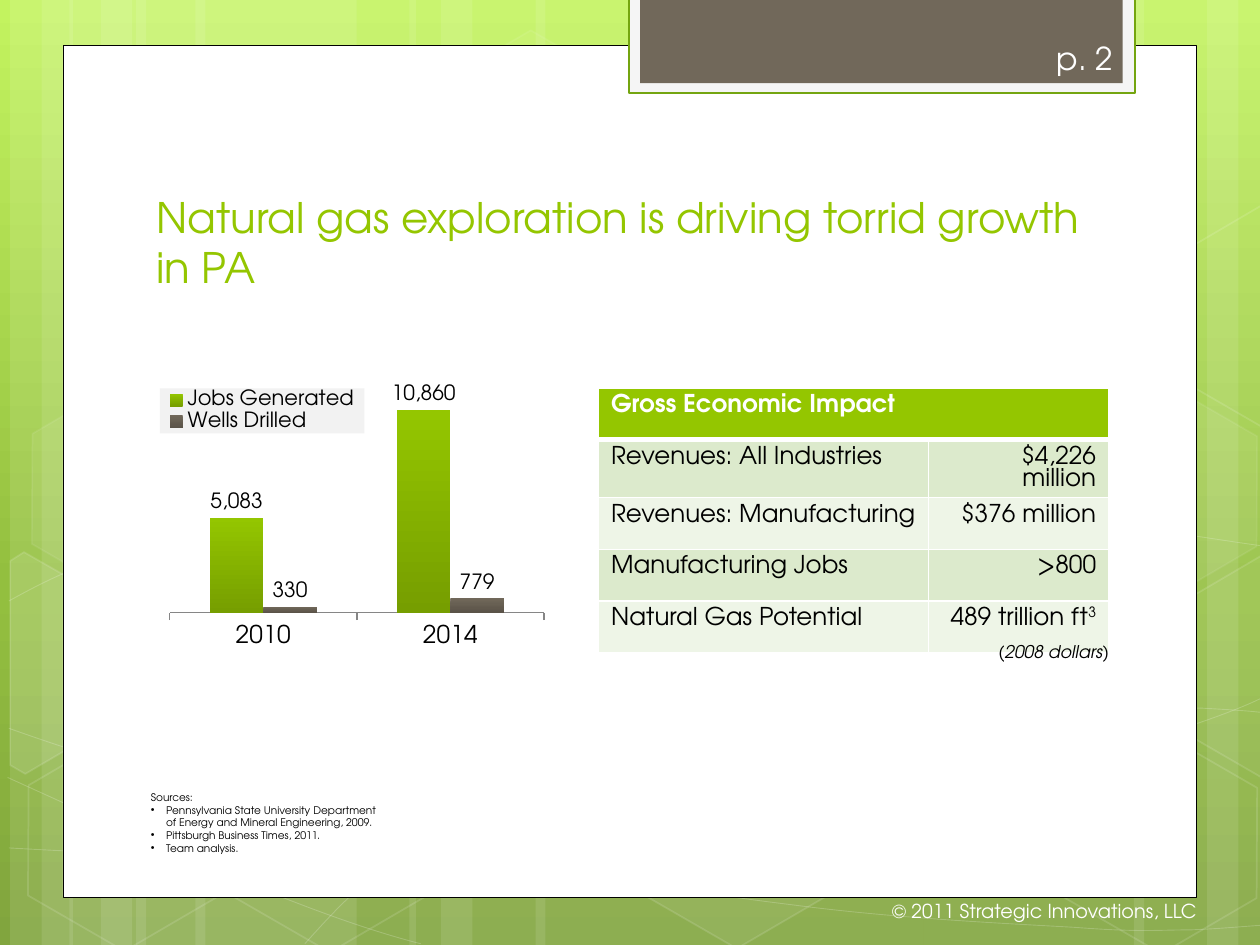
from copy import deepcopy
from dataclasses import dataclass
from math import cos, radians, sin

from lxml import etree
from pptx import Presentation
from pptx.chart.data import CategoryChartData
from pptx.dml.color import RGBColor
from pptx.enum.chart import XL_CHART_TYPE, XL_LABEL_POSITION, XL_LEGEND_POSITION, XL_TICK_MARK
from pptx.enum.shapes import MSO_SHAPE
from pptx.enum.text import MSO_ANCHOR, MSO_AUTO_SIZE, PP_ALIGN
from pptx.oxml import parse_xml
from pptx.oxml.ns import nsdecls, qn
from pptx.util import Pt

SCALE = 9144  # EMU per px, 100 px to the inch
TILT = 30
FONT = "TeX Gyre Adventor"
GREEN, TAUPE, WHITE, BLACK = "94C600", "71685A", "FFFFFF", "000000"
RECTANGLE, HEXAGON = MSO_SHAPE.RECTANGLE, MSO_SHAPE.HEXAGON
LEFT, RIGHT = PP_ALIGN.LEFT, PP_ALIGN.RIGHT


@dataclass(frozen=True)
class Paint:
    fill: str | None = None
    fill_alpha: int = 100
    line: str | None = None
    width: float = 1
    line_alpha: int = 100


@dataclass(frozen=True)
class CutHexagon:
    center: tuple
    points: list
    fill_alpha: int


@dataclass(frozen=True)
class Hexagon:
    left: int
    top: int
    fill_alpha: int
    line_alpha: int


BAND = Paint(fill=WHITE, fill_alpha=10)
CURVE = Paint(line=WHITE, width=0.5, line_alpha=20)
BANDS = [(108, 175), (8, 50), (33, 83), (155, 175), (55, 50), (80, 83),
         (733, 175), (958, 50), (900, 83), (425, 308), (325, 50), (350, 83)]
# Each curve is a start point followed by triples of Bézier points
CURVES = [
    [(7, 673), (61, 676), (115, 679), (190, 678), (265, 677), (358, 675), (458, 665),
     (558, 655), (700, 636), (792, 617), (883, 598), (977, 568), (1007, 551)],
    [(7, 477), (36, 461), (65, 446), (121, 431), (178, 416), (259, 394), (347, 387),
     (436, 380), (544, 379), (654, 387), (764, 395), (947, 426), (1007, 434)],
    [(6, 617), (127, 672), (247, 727), (334, 749)],
    [(7, 578), (38, 589), (70, 600), (128, 616), (186, 631), (273, 656), (357, 673),
     (440, 690), (545, 708), (628, 718), (711, 729), (800, 733), (853, 736),
     (905, 740), (919, 738), (945, 738), (971, 737), (989, 735), (1007, 734)],
    [(242, 749), (260, 729), (278, 709), (302, 691), (326, 673), (360, 653), (388, 639),
     (416, 625), (433, 619), (470, 609), (506, 599), (573, 585), (608, 578),
     (644, 571), (649, 571), (680, 569), (711, 566), (760, 563), (794, 562),
     (829, 561), (886, 562), (886, 562), (886, 562), (953, 562), (953, 562),
     (971, 563), (988, 564), (997, 565), (1006, 566), (1003, 565), (1006, 566)],
]
HEXAGONS = [Hexagon(334, 36, 4, 8), Hexagon(497, 589, 6, 12), Hexagon(11, 591, 0, 12),
            Hexagon(14, 312, 7, 8), Hexagon(174, 592, 0, 12), Hexagon(753, 453, 10, 12),
            Hexagon(834, 593, 0, 12), Hexagon(834, 314, 7, 8)]
CUT_HEXAGONS = [
    CutHexagon((36, 535), [(8, 445), (19, 438), (96, 482), (95, 570), (20, 614), (8, 607)], 10),
    CutHexagon((985, 520), [(926, 485), (1001, 441), (1009, 446), (1009, 613), (1002, 617),
                            (926, 573)], 4),
    CutHexagon((985, 241), [(926, 207), (1001, 163), (1010, 168), (1009, 335), (1002, 339),
                            (926, 295)], 0),
]
TABLE_ROWS = [("Gross Economic Impact", ""), ("Revenues: All Industries", "$4,226 million"),
              ("Revenues: Manufacturing", "$376 million"), ("Manufacturing Jobs", ">800"),
              ("Natural Gas Potential", "489 trillion ft")]
SOURCES = ["Sources:",
           "Pennsylvania State University Department\vof Energy and Mineral Engineering, 2009.",
           "Pittsburgh Business Times, 2011.", "Team analysis."]


def px(*values: float) -> list[int]:
    return [round(value * SCALE) for value in values]


def color(value: str) -> RGBColor:
    return RGBColor.from_string(value)


def assign(target, **values) -> None:
    for name, value in values.items():
        setattr(target, name, value)


def set_font(font, size: float, fill: str = BLACK, **extra) -> None:
    assign(font, name=FONT, size=Pt(size), **extra)
    font.color.rgb = color(fill)


def set_fill(fill, value: str | None, alpha: int = 100) -> None:
    if value is None or alpha == 0:
        fill.background()
        return
    fill.solid()
    fill.fore_color.rgb = color(value)
    if alpha < 100:
        node = fill._xPr.find(qn("a:solidFill"))[0]
        etree.SubElement(node, qn("a:alpha"), val=str(alpha * 1000))


def set_paint(shape, paint: Paint) -> None:
    shape.shadow.inherit = False
    set_fill(shape.fill, paint.fill, paint.fill_alpha)
    set_fill(shape.line.fill, paint.line, paint.line_alpha)
    if paint.line:
        shape.line.width = Pt(paint.width)


def add_box(slide, box: tuple, paint: Paint, kind=RECTANGLE):
    shape = slide.shapes.add_shape(kind, *px(*box))
    set_paint(shape, paint)
    return shape


def add_outline(slide, points: list, paint: Paint, close: bool):
    start, *rest = [tuple(px(*point)) for point in points]
    builder = slide.shapes.build_freeform(*start)
    builder.add_line_segments(rest, close=close)
    shape = builder.convert_to_shape()
    set_paint(shape, paint)
    return shape


def add_curve(slide, points: list) -> None:
    """Draw an outline whose points, in threes, become Bézier segments."""
    shape = add_outline(slide, points, CURVE, close=False)
    segments = list(shape.element.iter(qn("a:lnTo")))
    outline = segments[0].getparent()
    for first in range(0, len(segments), 3):
        bezier = etree.SubElement(outline, qn("a:cubicBezTo"))
        for segment in segments[first:first + 3]:
            bezier.append(segment[0])
            outline.remove(segment)


def add_cut_hexagon(slide, item: CutHexagon) -> None:
    """Turn the points back about the center, then tilt the whole shape."""
    cosine, sine = cos(radians(TILT)), sin(radians(TILT))
    center_x, center_y = item.center
    points = [(center_x + (x - center_x) * cosine + (y - center_y) * sine,
               center_y + (y - center_y) * cosine - (x - center_x) * sine)
              for x, y in item.points]
    shape = add_outline(slide, points, Paint(WHITE, item.fill_alpha, WHITE, 1, 12), close=True)
    shape.rotation = TILT


def add_text(slide, box: tuple, lines: list, size: float, fill: str = BLACK,
             align=LEFT, wrap: bool = True, **extra) -> None:
    frame = slide.shapes.add_textbox(*px(*box)).text_frame
    frame.word_wrap = wrap
    for index, line in enumerate(lines):
        paragraph = frame.add_paragraph() if index else frame.paragraphs[0]
        assign(paragraph, text=line, alignment=align)
        if index:
            properties = paragraph._p.get_or_add_pPr()
            indent = px(12)[0]
            properties.set("marL", str(indent))
            properties.set("indent", str(-indent))
            etree.SubElement(properties, qn("a:buFont"), typeface="Arial")
            etree.SubElement(properties, qn("a:buChar"), char="•")
        for run in paragraph.runs:
            set_font(run.font, size, fill, **extra)


def set_gradient(fill, stops: list, tree) -> None:
    """Fill from top to bottom with (percent, color) stops."""
    fill.gradient()
    fill.gradient_angle = 270
    stop_list = tree.find(".//" + qn("a:gsLst"))
    for _ in stops[2:]:
        stop_list.append(deepcopy(stop_list[0]))
    for stop, (position, value) in zip(fill.gradient_stops, stops):
        stop.position = position / 100
        stop.color.rgb = color(value)


def chart_layout(x: float, y: float, w: float, h: float, inner: bool = False):
    target = '<c:layoutTarget val="inner"/>' if inner else ""
    modes = '<c:xMode val="edge"/><c:yMode val="edge"/>'
    sizes = "".join(f'<c:{key} val="{value}"/>' for key, value in zip("xywh", (x, y, w, h)))
    return parse_xml(f'<c:layout {nsdecls("c")}><c:manualLayout>{target}{modes}{sizes}'
                     '</c:manualLayout></c:layout>')


def add_jobs_chart(slide) -> None:
    data = CategoryChartData(number_format="#,##0")
    data.categories = ["2010", "2014"]
    data.add_series("Jobs Generated", (5083, 10860))
    data.add_series("Wells Drilled", (330, 779))
    chart = slide.shapes.add_chart(XL_CHART_TYPE.COLUMN_CLUSTERED, *px(115, 292, 396, 324), data).chart
    assign(chart, has_title=False, has_legend=True)
    set_font(chart.font, 18)
    assign(chart.value_axis, visible=False, has_major_gridlines=False,
           minimum_scale=0, maximum_scale=12000)
    axis = chart.category_axis
    axis.major_tick_mark = XL_TICK_MARK.OUTSIDE
    axis.format.line.color.rgb = color("868686")
    set_font(axis.tick_labels.font, 14)
    plot = chart.plots[0]
    assign(plot, gap_width=150, overlap=0, vary_by_categories=False)
    for series, shades in zip(plot.series, [(GREEN, "769E00"), (TAUPE, "5A5348")]):
        series.invert_if_negative = False
        set_gradient(series.format.fill, list(zip((0, 100), shades)), series._element)
        labels = series.data_labels
        assign(labels, show_value=True, number_format="#,##0", number_format_is_linked=False,
               position=XL_LABEL_POSITION.OUTSIDE_END)
        set_font(labels.font, 12)
    # Legend and plot area placement
    assign(chart.legend, position=XL_LEGEND_POSITION.LEFT, include_in_layout=True)
    set_font(chart.legend.font, 12)
    legend = chart.element.find(".//" + qn("c:legend"))
    area = chart.element.find(".//" + qn("c:plotArea"))
    for parent in (legend, area):
        for old in parent.findall(qn("c:layout")):
            parent.remove(old)
    area.insert(0, chart_layout(0.05, 0.05, 0.75, 0.55, inner=True))
    legend.find(qn("c:legendPos")).addnext(chart_layout(0.03, 0.05, 0.41, 0.11))
    legend.find(qn("c:overlay")).addnext(parse_xml(
        f'<c:spPr {nsdecls("c", "a")}><a:solidFill><a:srgbClr val="F2F2F2"/></a:solidFill></c:spPr>'))


def set_borders(cell, header: bool) -> None:
    properties = cell._tc.get_or_add_tcPr()
    for index, side in enumerate(("lnL", "lnR", "lnT", "lnB")):
        width = Pt(3 if header and side == "lnB" else 1)
        properties.insert(index, parse_xml(
            f'<a:{side} {nsdecls("a")} w="{width}"><a:solidFill>'
            f'<a:srgbClr val="{WHITE}"/></a:solidFill></a:{side}>'))


def add_impact_table(slide) -> None:
    table = slide.shapes.add_table(len(TABLE_ROWS), 2, *px(475, 308, 405, 205)).table
    for column, width in zip(table.columns, px(262, 143)):
        column.width = width
    for row, texts in enumerate(TABLE_ROWS):
        table.rows[row].height = px(41)[0]
        fill = GREEN if row == 0 else ("EEF5E7", "DCEACC")[row % 2]
        for column, text in enumerate(texts):
            cell = table.cell(row, column)
            set_fill(cell.fill, fill)
            set_borders(cell, row == 0)
            paragraph = cell.text_frame.paragraphs[0]
            assign(paragraph, text=text, alignment=RIGHT if column else LEFT)
            if text.endswith("ft"):
                exponent = paragraph.add_run()
                exponent.text = "3"
                exponent.font._element.set("baseline", "30000")
            for run in paragraph.runs:
                set_font(run.font, 14, BLACK if row else WHITE, bold=row == 0)
    table.cell(0, 0).merge(table.cell(0, 1))


def main() -> None:
    presentation = Presentation()
    presentation.slide_width, presentation.slide_height = px(1000, 750)
    slide = presentation.slides.add_slide(presentation.slide_layouts[5])

    # Backdrop
    set_gradient(slide.background.fill, [(0, "C3F35F"), (62, "93BF3F"), (100, "81A53E")], slide.element)
    for left, width in BANDS:
        add_box(slide, (left, 0, width, 750), BAND)
    for curve in CURVES:
        add_curve(slide, curve)
    for item in HEXAGONS:
        hexagon = add_box(slide, (item.left, item.top, 175, 152),
                          Paint(WHITE, item.fill_alpha, WHITE, 1, item.line_alpha), HEXAGON)
        hexagon.rotation = TILT
        hexagon.adjustments[0] = 0.285
    for item in CUT_HEXAGONS:
        add_cut_hexagon(slide, item)

    # Page panel and tab
    add_box(slide, (50, 36, 900, 676), Paint(WHITE, line=BLACK, width=0.5))
    add_box(slide, (499, -2, 402, 76), Paint("F5F5F5", line="74A510", width=1.25))
    add_box(slide, (508, -2, 383, 68), Paint(TAUPE))

    # Title, raised above the panel
    title = slide.shapes.title
    title.element.getparent().append(title.element)
    assign(title, **dict(zip(("left", "top", "width", "height"), px(114, 112, 768, 125))))
    assign(title.text_frame, text="Natural gas exploration is driving torrid growth in PA",
           vertical_anchor=MSO_ANCHOR.BOTTOM, word_wrap=True, auto_size=MSO_AUTO_SIZE.NONE)
    paragraph = title.text_frame.paragraphs[0]
    paragraph.alignment = LEFT
    set_font(paragraph.runs[0].font, 24, GREEN)

    # Content and notes
    add_jobs_chart(slide)
    add_impact_table(slide)
    add_text(slide, (779, 504, 111, 27), ["(2008 dollars)"], 10, align=RIGHT, wrap=False, italic=True)
    add_text(slide, (110, 623, 766, 61), SOURCES, 6)
    add_text(slide, (829, 26, 65, 40), ["p. 2"], 18, WHITE, wrap=False)
    add_text(slide, (577, 709, 383, 40), ["© 2011 Strategic Innovations, LLC"], 11, WHITE, RIGHT)
    presentation.save("out.pptx")


if __name__ == "__main__":
    main()
